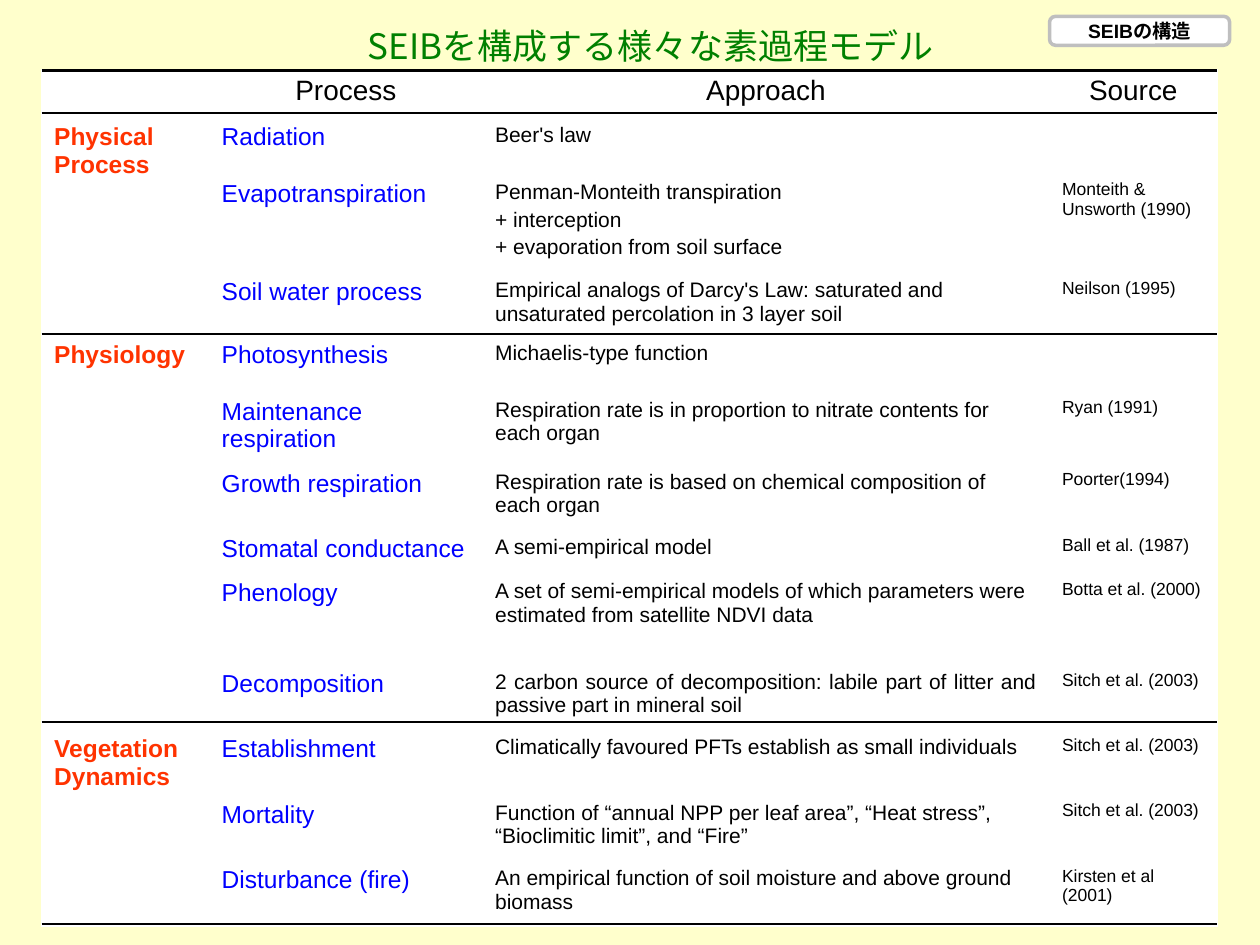
import pptx
import pptx.dml.color
import pptx.enum.shapes
import pptx.enum.text
import pptx.oxml
import pptx.oxml.ns
import pptx.util
from lxml import etree

Inches = pptx.util.Inches
Pt = pptx.util.Pt
ALIGN = pptx.enum.text.PP_ALIGN
MIDDLE = pptx.enum.text.MSO_ANCHOR.MIDDLE
qn = pptx.oxml.ns.qn
JAPANESE_FONT = "Noto Sans CJK JP"

COLUMN_WIDTHS = [1.33, 2.17, 4.5, 1.33]
HEADINGS = ["", "Process", "Approach", "Source"]
HEADER_HEIGHT = 0.38
PENMAN = "Penman-Monteith transpiration\n+ interception\n+ evaporation from soil surface"
LABILE = ("2 carbon source of decomposition: labile part of litter and "
          "passive part in mineral soil")
JUSTIFIED = {*PENMAN.split("\n")[:2], LABILE}

# Each group: its name, then rows of height, process, approach, source
GROUPS = [
    ("Physical Process", [
        (0.45, "Radiation", "Beer's law", ""),
        (0.78, "Evapotranspiration", PENMAN, "Monteith & Unsworth (1990)"),
        (0.5, "Soil water process",
         "Empirical analogs of Darcy's Law: saturated and unsaturated percolation in 3 layer soil",
         "Neilson (1995)"),
    ]),
    ("Physiology", [
        (0.45, "Photosynthesis", "Michaelis-type function", ""),
        (0.57, "Maintenance respiration",
         "Respiration rate is in proportion to nitrate contents for each organ", "Ryan (1991)"),
        (0.52, "Growth respiration",
         "Respiration rate is based on chemical composition of each organ", "Poorter(1994)"),
        (0.35, "Stomatal conductance", "A semi-empirical model", "Ball et al. (1987)"),
    ]),
    ("", [
        (0.72, "Phenology",
         "A set of semi-empirical models of which parameters were estimated from satellite NDVI data",
         "Botta et al. (2000)"),
        (0.52, "Decomposition", LABILE, "Sitch et al. (2003)"),
    ]),
    ("Vegetation Dynamics", [
        (0.52, "Establishment", "Climatically favoured PFTs establish as small individuals",
         "Sitch et al. (2003)"),
        (0.52, "Mortality",
         "Function of “annual NPP per leaf area”, “Heat stress”, “Bioclimitic limit”, and “Fire”",
         "Sitch et al. (2003)"),
        (0.52, "Disturbance (fire)",
         "An empirical function of soil moisture and above ground biomass", "Kirsten et al (2001)"),
    ]),
]
RULE_HEIGHTS = [0.56, 0.9, 2.65, 5.73, 7.33]


def color(hex_value):
    return pptx.dml.color.RGBColor.from_string(hex_value)


def paint(fill, hex_value):
    fill.solid()
    fill.fore_color.rgb = color(hex_value)


def write(frame, text, size, hex_value="000000", bold=False, align=ALIGN.LEFT, font="Arial"):
    """Fill a text frame, one paragraph for each line of text."""
    for index, line in enumerate(text.split("\n")):
        para = frame.add_paragraph() if index else frame.paragraphs[0]
        para.alignment = ALIGN.JUSTIFY if line in JUSTIFIED else align
        if index:
            para.space_before = Pt(0.2 * size)
        span = para.add_run()
        span.text = line
        span.font.size = Pt(size)
        span.font.bold = bold
        span.font.color.rgb = color(hex_value)
        span.font.name = font
        etree.SubElement(span._r.get_or_add_rPr(), qn("a:ea"), typeface=JAPANESE_FONT)


def add_title(page, left, top, width, height):
    title = page.shapes.title
    title.left, title.top = Inches(left), Inches(top)
    title.width, title.height = Inches(width), Inches(height)
    title.text_frame.word_wrap = True
    title.text_frame.vertical_anchor = MIDDLE
    write(title.text_frame, "SEIBを構成する様々な素過程モデル", 20, "008000",
          align=ALIGN.CENTER, font=JAPANESE_FONT)


def add_badge(page, left, top, width, height):
    badge = page.shapes.add_shape(
        pptx.enum.shapes.MSO_SHAPE.ROUNDED_RECTANGLE,
        Inches(left), Inches(top), Inches(width), Inches(height))
    badge.adjustments[0] = 0.206
    badge.shadow.inherit = False
    paint(badge.fill, "FFFFFF")
    paint(badge.line.fill, "BFBFBF")
    badge.line.width = Pt(2)
    badge.text_frame.vertical_anchor = MIDDLE
    write(badge.text_frame, "SEIBの構造", 11, bold=True, align=ALIGN.CENTER)


def add_process_table(page, left, top):
    row_heights = [HEADER_HEIGHT] + [row[0] for _, rows in GROUPS for row in rows]
    table = page.shapes.add_table(
        len(row_heights), len(COLUMN_WIDTHS), Inches(left), Inches(top),
        Inches(sum(COLUMN_WIDTHS)), Inches(sum(row_heights))).table
    table.first_row = False
    table.horz_banding = False
    for column, width in zip(table.columns, COLUMN_WIDTHS):
        column.width = Inches(width)
    for row, height in zip(table.rows, row_heights):
        row.height = Inches(height)
    for cell in table.iter_cells():
        paint(cell.fill, "FFFFFF")

    for column, heading in enumerate(HEADINGS):
        write(table.cell(0, column).text_frame, heading, 16, align=ALIGN.CENTER)
    first = 1
    for name, rows in GROUPS:
        group_cell = table.cell(first, 0)
        group_cell.merge(table.cell(first + len(rows) - 1, 0))
        write(group_cell.text_frame, name, 14, "FF3300", bold=True)
        for index, (_, process, approach, source) in enumerate(rows, first):
            write(table.cell(index, 1).text_frame, process, 14, "0000FF")
            write(table.cell(index, 2).text_frame, approach, 12)
            write(table.cell(index, 3).text_frame, source, 10)
        first += len(rows)


def add_rule(page, left, top, width):
    rule = page.shapes.add_connector(
        pptx.enum.shapes.MSO_CONNECTOR.STRAIGHT,
        Inches(left), Inches(top), Inches(left + width), Inches(top))
    paint(rule.line.fill, "000000")
    rule.line.width = Pt(1.2)
    etree.SubElement(rule._element.spPr, qn("a:effectLst"))


def main():
    deck = pptx.Presentation()
    deck.slide_width, deck.slide_height = Inches(10), Inches(7.5)
    page = deck.slides.add_slide(deck.slide_layouts[5])
    paint(page.background.fill, "FFFFCC")
    table_left = 0.33
    add_process_table(page, table_left, 0.55)
    for rule_height in RULE_HEIGHTS:
        add_rule(page, table_left, rule_height, sum(COLUMN_WIDTHS))
    add_title(page, 2.33, 0.14, 5.67, 0.44)
    add_badge(page, 8.33, 0.13, 1.43, 0.23)
    deck.save("out.pptx")


if __name__ == "__main__":
    main()
